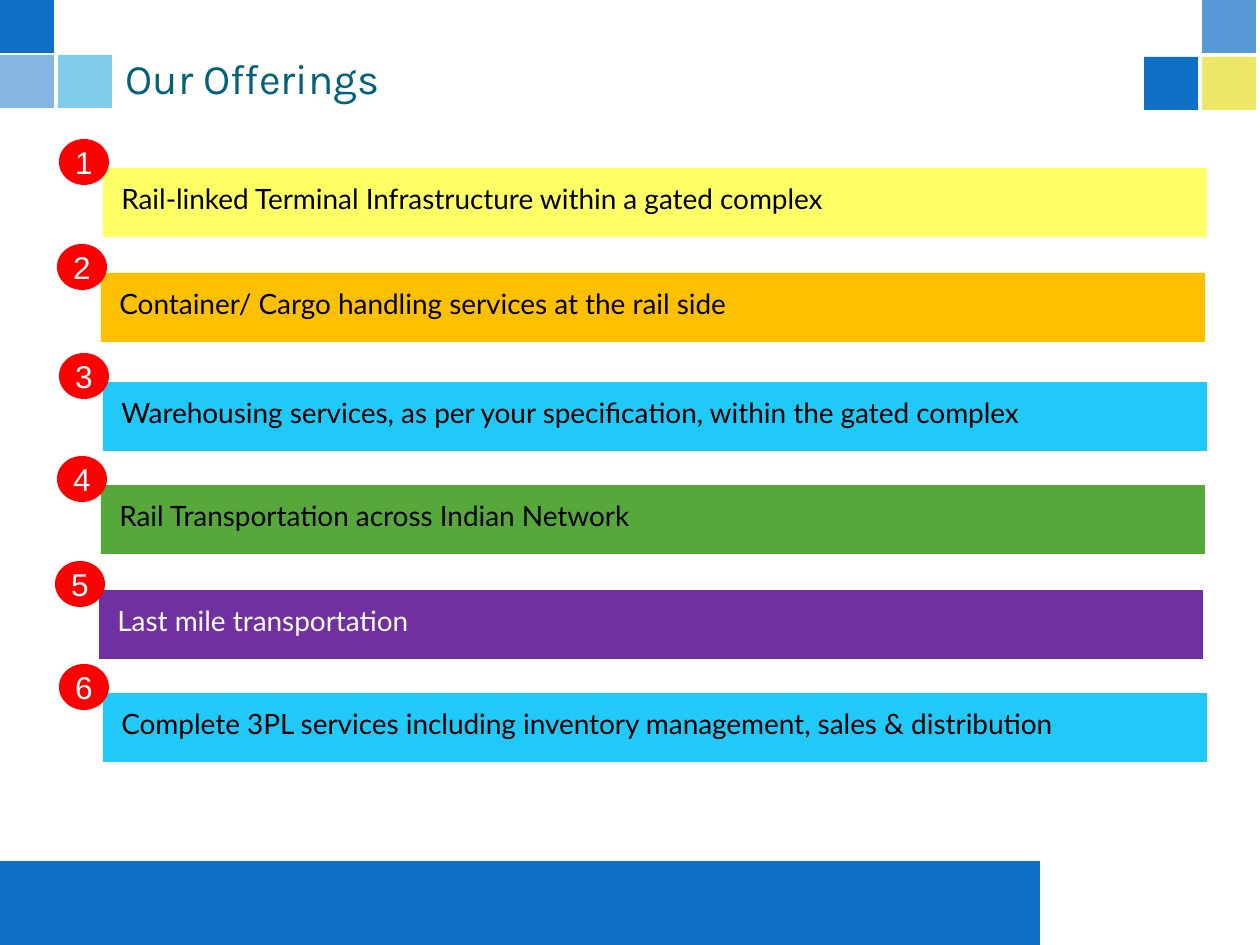
from pptx import Presentation
from pptx.dml.color import RGBColor
from pptx.enum.shapes import MSO_SHAPE
from pptx.enum.text import MSO_ANCHOR, MSO_AUTO_SIZE, PP_ALIGN
from pptx.oxml.ns import qn
from pptx.util import Emu, Pt
from lxml.etree import SubElement

SCALE = 914400 / 126
BLUE = RGBColor(0x0F, 0x6F, 0xC6)
AQUA = RGBColor(0x00, 0x9D, 0xD9)
LIME = RGBColor(0xE2, 0xD7, 0x00)
TEAL = RGBColor(0x04, 0x61, 0x7B)
YELLOW = RGBColor(0xFF, 0xFF, 0x66)
AMBER = RGBColor(0xFF, 0xC0, 0x00)
CYAN = RGBColor(0x20, 0xC9, 0xF8)
GREEN = RGBColor(0x55, 0xA8, 0x39)
PURPLE = RGBColor(0x70, 0x30, 0xA0)
RED = RGBColor(0xFF, 0x00, 0x00)
BLACK = RGBColor(0x00, 0x00, 0x00)
WHITE = RGBColor(0xFF, 0xFF, 0xFF)

SQUARES = [
    (1202, 57, LIME, 60),
    (58, 55, AQUA, 50),
    (0, 0, BLUE, 100),
    (0, 55, BLUE, 50),
    (1202, 0, BLUE, 70),
    (1144, 57, BLUE, 100),
]
OFFERS = [
    (103, 168, YELLOW, BLACK, "Rail-linked Terminal Infrastructure within a gated complex"),
    (101, 273, AMBER, BLACK, "Container/ Cargo handling services at the rail side"),
    (103, 382, CYAN, BLACK, "Warehousing services, as per your specification, within the gated complex"),
    (101, 485, GREEN, BLACK, "Rail Transportation across Indian Network"),
    (99, 590, PURPLE, WHITE, "Last mile transportation"),
    (103, 693, CYAN, BLACK, "Complete 3PL services including inventory management, sales & distribution"),
]


def box(*sides):
    return [Emu(round(side * SCALE)) for side in sides]


class Deck:
    def __init__(self, wide, high):
        self.show = Presentation()
        self.show.slide_width, self.show.slide_height = box(wide, high)
        self.slide = self.show.slides.add_slide(self.show.slide_layouts[5])

    def words(self, frame, text, face, size, color, align=PP_ALIGN.LEFT):
        frame.text = text
        line = frame.paragraphs[0]
        line.alignment = align
        line.font.name = face
        line.font.size = Pt(size)
        line.font.color.rgb = color

    def title(self, text, *sides):
        head = self.slide.shapes.title
        head.left, head.top, head.width, head.height = box(*sides)
        frame = head.text_frame
        frame.auto_size = MSO_AUTO_SIZE.NONE
        frame.vertical_anchor = MSO_ANCHOR.MIDDLE
        self.words(frame, text, "Karla", 24, TEAL)

    def shape(self, color, *sides, kind=MSO_SHAPE.RECTANGLE, alpha=100):
        item = self.slide.shapes.add_shape(kind, *box(*sides))
        item.shadow.inherit = False
        item.fill.solid()
        item.fill.fore_color.rgb = color
        item.line.fill.background()
        if alpha < 100:
            tint = item.element.spPr.find(qn("a:solidFill"))[0]
            SubElement(tint, qn("a:alpha")).set("val", str(alpha * 1000))
        return item

    def label(self, text, color, *sides):
        frame = self.slide.shapes.add_textbox(*box(*sides)).text_frame
        frame.word_wrap = True
        frame.auto_size = MSO_AUTO_SIZE.SHAPE_TO_FIT_TEXT
        self.words(frame, text, "Lato", 16, color)

    def badge(self, text, *sides):
        frame = self.shape(RED, *sides, kind=MSO_SHAPE.OVAL).text_frame
        frame.word_wrap = False
        frame.vertical_anchor = MSO_ANCHOR.MIDDLE
        self.words(frame, text, "Arial", 18, WHITE, PP_ALIGN.CENTER)

    def offer(self, rank, left, top, fill, ink, text):
        self.shape(fill, left, top, 1104, 69)
        self.label(text, ink, left + 6, top + 7, 1097, 47)
        self.badge(str(rank), left - 44, top - 29, 50, 46)


def main():
    deck = Deck(1260, 945)
    deck.shape(BLUE, 0, 861, 1040, 84)
    for left, top, color, alpha in SQUARES:
        deck.shape(color, left, top, 54, 53, alpha=alpha)
    deck.title("Our Offerings", 113, 39, 1021, 78)
    for rank, offer in enumerate(OFFERS, 1):
        deck.offer(rank, *offer)
    deck.show.save("out.pptx")


if __name__ == "__main__":
    main()
